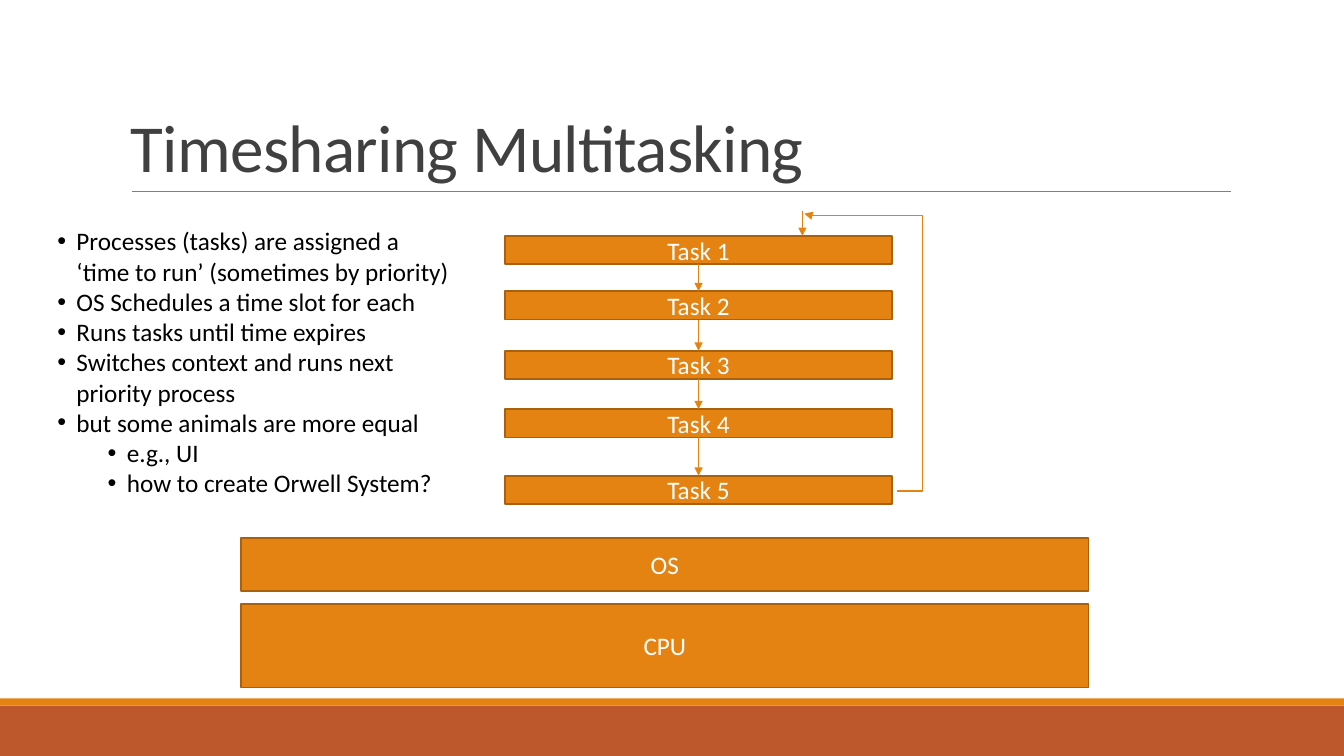
from itertools import pairwise

from lxml.etree import SubElement
from pptx import Presentation
from pptx.dml.color import RGBColor
from pptx.enum.shapes import MSO_CONNECTOR, MSO_SHAPE
from pptx.enum.text import MSO_ANCHOR, PP_ALIGN
from pptx.oxml.ns import qn
from pptx.util import Inches, Pt

TITLE = "Timesharing Multitasking"
BULLETS = [
    (0, "Processes (tasks) are assigned a ‘time to run’ (sometimes by priority)"),
    (0, "OS Schedules a time slot for each"),
    (0, "Runs tasks until time expires"),
    (0, "Switches context and runs next priority process"),
    (0, "but some animals are more equal"),
    (1, "e.g., UI"),
    (1, "how to create Orwell System?"),
]
TASK_ROWS = {"Task 1": 23.4, "Task 2": 28.9, "Task 3": 34.8, "Task 4": 40.6, "Task 5": 47.2}
LAYERS = {"CPU": (59.9, 8.3), "OS": (53.4, 5.2)}
FOOTER_BANDS = [(70, 5, "BD582C"), (69.3, 0.7, "E48312")]

WIDTH, HEIGHT = 133.33, 75
TASK_LEFT, TASK_WIDTH, TASK_HEIGHT = 50.1, 38.4, 2.8
LAYER_LEFT, LAYER_WIDTH = 23.9, 84.1
ORANGE, BROWN, WHITE = "E48312", "A9610D", "FFFFFF"
BODY_FONT = {"name": "Calibri", "size": Pt(18)}
TITLE_FONT = {"name": "Calibri", "size": Pt(48)}


def cells(*counts):
    return [Inches(count / 10) for count in counts]


def color(value):
    return RGBColor.from_string(value)


def apply(target, values):
    for name, value in values.items():
        setattr(target, name, value)


def write(para, text, font, ink):
    span = para.add_run()
    span.text = text
    apply(span.font, font)
    span.font.color.rgb = color(ink)
    return span


def add_bar(page, place, fill, label=None):
    bar = page.shapes.add_shape(MSO_SHAPE.RECTANGLE, *cells(*place))
    bar.shadow.inherit = False
    bar.fill.solid()
    bar.fill.fore_color.rgb = color(fill)
    if label is None:
        bar.line.fill.background()
        return bar
    bar.line.color.rgb = color(BROWN)
    bar.line.width = Pt(1.25)
    bar.text_frame.vertical_anchor = MSO_ANCHOR.MIDDLE
    para = bar.text_frame.paragraphs[0]
    para.alignment = PP_ALIGN.CENTER
    write(para, label, BODY_FONT, WHITE)
    return bar


def add_line(page, ends, ink=ORANGE, width=1, arrow=True, kind=MSO_CONNECTOR.STRAIGHT):
    line = page.shapes.add_connector(kind, *cells(*ends))
    line.line.color.rgb = color(ink)
    line.line.width = Pt(width)
    properties = line._element.spPr
    if arrow:
        SubElement(properties.find(qn("a:ln")), qn("a:tailEnd"), type="triangle")
    SubElement(properties, qn("a:effectLst"))
    return line


def add_text_box(page, place, anchor):
    box = page.shapes.add_textbox(*cells(*place))
    apply(box.text_frame, {"word_wrap": True, "vertical_anchor": anchor})
    return box.text_frame


def add_title(page):
    para = add_text_box(page, (12, 3.1, 110, 15.9), MSO_ANCHOR.BOTTOM).paragraphs[0]
    para.line_spacing = 0.85
    span = write(para, TITLE, TITLE_FONT, "404040")
    span.font._element.set("spc", "-50")


def add_bullets(page):
    frame = add_text_box(page, (4.7, 21.9, 40.9, 31.3), MSO_ANCHOR.TOP)
    for index, (level, text) in enumerate(BULLETS):
        para = frame.add_paragraph() if index else frame.paragraphs[0]
        para.level = level
        write(para, text, BODY_FONT, "000000")
        properties = para._p.get_or_add_pPr()
        properties.set("marL", str(Inches(0.19 + level * 0.5)))
        properties.set("indent", str(Inches(-0.19)))
        SubElement(properties, qn("a:buFont"), typeface="Arial")
        SubElement(properties, qn("a:buChar"), char="•")


def add_tasks(page):
    tasks = [
        add_bar(page, (TASK_LEFT, top, TASK_WIDTH, TASK_HEIGHT), ORANGE, name)
        for name, top in TASK_ROWS.items()
    ]
    middle = TASK_LEFT + TASK_WIDTH / 2
    for (upper, lower), (start, end) in zip(pairwise(tasks), pairwise(TASK_ROWS.values())):
        arrow = add_line(page, (middle, start + TASK_HEIGHT, middle, end))
        arrow.begin_connect(upper, 2)
        arrow.end_connect(lower, 0)


def add_loop(page):
    loop = add_line(page, (89, 48.7, 79.8, 21.2), kind=MSO_CONNECTOR.ELBOW)
    geometry = loop._element.spPr.find(qn("a:prstGeom"))
    geometry.set("prst", "bentConnector4")
    guides = geometry.find(qn("a:avLst"))
    for name, share in {"adj1": -27100, "adj2": 99400}.items():
        SubElement(guides, qn("a:gd"), name=name, fmla=f"val {share}")
    add_line(page, (79.6, 20.9, 79.6, TASK_ROWS["Task 1"]))


def main():
    deck = Presentation()
    deck.slide_width, deck.slide_height = cells(WIDTH, HEIGHT)
    page = deck.slides.add_slide(deck.slide_layouts[6])
    page.background.fill.solid()
    page.background.fill.fore_color.rgb = color(WHITE)
    for top, height, fill in FOOTER_BANDS:
        add_bar(page, (0, top, WIDTH, height), fill)
    add_line(page, (13.1, 19, 122.1, 19), "808080", 0.5, arrow=False)
    add_title(page)
    add_bullets(page)
    for name, (top, height) in LAYERS.items():
        add_bar(page, (LAYER_LEFT, top, LAYER_WIDTH, height), ORANGE, name)
    add_tasks(page)
    add_loop(page)
    deck.save("out.pptx")


if __name__ == "__main__":
    main()
